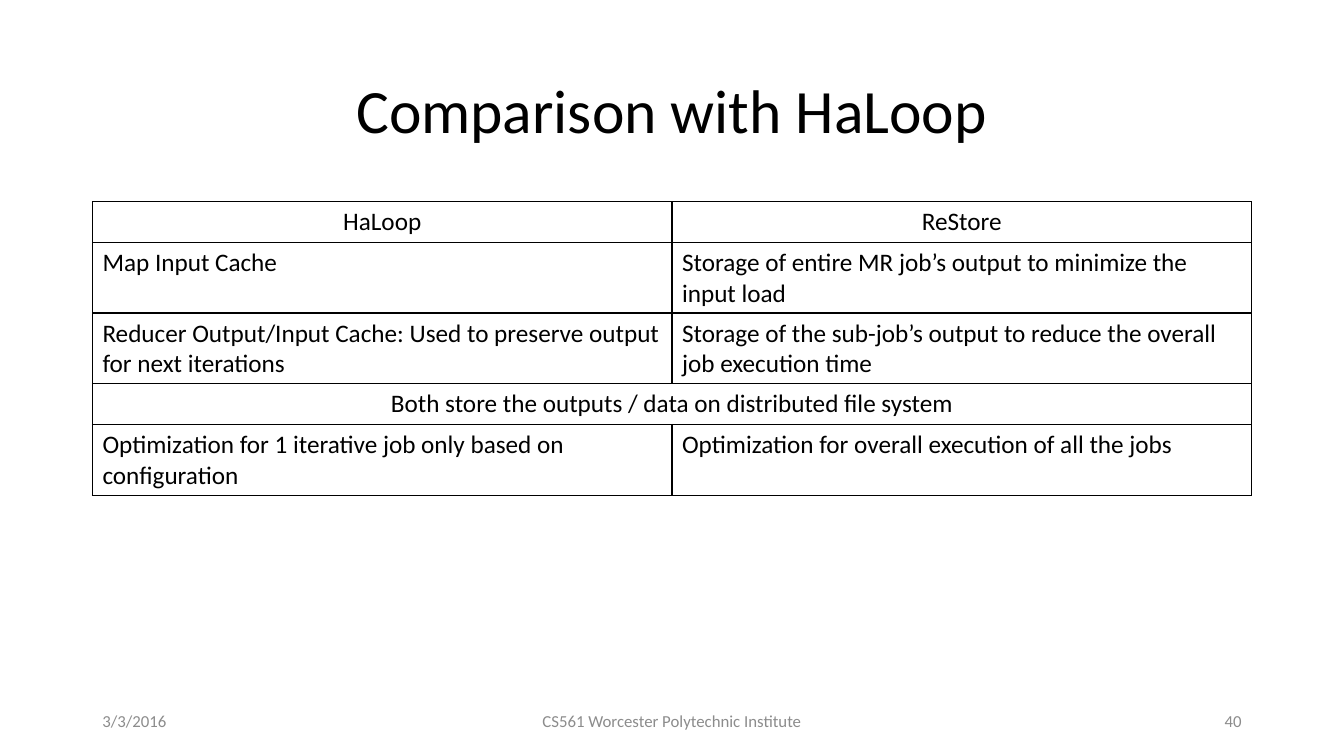
from dataclasses import dataclass

from lxml.etree import SubElement
from pptx import Presentation
from pptx.dml.color import RGBColor
from pptx.enum.text import MSO_ANCHOR, PP_ALIGN
from pptx.oxml.ns import qn
from pptx.slide import Slide
from pptx.table import _Cell
from pptx.text.text import _Paragraph
from pptx.util import Cm, Pt


@dataclass(frozen=True)
class Theme:
    font: str = "Calibri"
    ink: str = "000000"
    muted: str = "8C8C8C"
    title_size: int = 44
    table_size: int = 18
    footer_size: int = 12
    border_width: int = 1


@dataclass(frozen=True)
class TextLine:
    text: str
    left: float
    top: float
    width: float
    height: float
    size: int
    color: str
    alignment: PP_ALIGN
    line_spacing: float = 1.0


@dataclass(frozen=True)
class ComparisonRow:
    """A row with one text spans both columns."""
    texts: tuple[str, ...]
    alignment: PP_ALIGN = PP_ALIGN.LEFT


THEME = Theme()
MARGIN = 2.33
CONTENT_WIDTH = 29.21
TABLE_TOP = 5.08
ROW_HEIGHT = 1.03
FOOTER_TOP = 17.66
FOOTER_HEIGHT = 1.01
SIDE_WIDTH = 7.62
CENTER_WIDTH = 11.43


def footer_line(text: str, left: float, width: float, alignment: PP_ALIGN) -> TextLine:
    return TextLine(text, left, FOOTER_TOP, width, FOOTER_HEIGHT,
                    THEME.footer_size, THEME.muted, alignment)


TEXT_LINES = (
    TextLine("Comparison with HaLoop", MARGIN, 1.01, CONTENT_WIDTH, 3.69,
             THEME.title_size, THEME.ink, PP_ALIGN.CENTER, 0.9),
    footer_line("3/3/2016", MARGIN, SIDE_WIDTH, PP_ALIGN.LEFT),
    footer_line("CS561 Worcester Polytechnic Institute",
                MARGIN + (CONTENT_WIDTH - CENTER_WIDTH) / 2, CENTER_WIDTH, PP_ALIGN.CENTER),
    footer_line("40", MARGIN + CONTENT_WIDTH - SIDE_WIDTH, SIDE_WIDTH, PP_ALIGN.RIGHT),
)

COMPARISON = (
    ComparisonRow(("HaLoop", "ReStore"), PP_ALIGN.CENTER),
    ComparisonRow(("Map Input Cache",
                   "Storage of entire MR job’s output to minimize the input load")),
    ComparisonRow(("Reducer Output/Input Cache: Used to preserve output for next iterations",
                   "Storage of the sub-job’s output to reduce the overall job execution time")),
    ComparisonRow(("Both store the outputs / data on distributed file system",), PP_ALIGN.CENTER),
    ComparisonRow(("Optimization for 1 iterative job only based on configuration",
                   "Optimization for overall execution of all the jobs")),
)


def format_paragraph(paragraph: _Paragraph, size: int, color: str, alignment: PP_ALIGN) -> None:
    paragraph.alignment = alignment
    for run in paragraph.runs:
        run.font.name = THEME.font
        run.font.size = Pt(size)
        run.font.color.rgb = RGBColor.from_string(color)


def add_text_line(slide: Slide, line: TextLine) -> None:
    shape = slide.shapes.add_textbox(Cm(line.left), Cm(line.top), Cm(line.width), Cm(line.height))
    text_frame = shape.text_frame
    text_frame.word_wrap = True
    text_frame.vertical_anchor = MSO_ANCHOR.MIDDLE
    text_frame.text = line.text
    paragraph = text_frame.paragraphs[0]
    paragraph.line_spacing = line.line_spacing
    format_paragraph(paragraph, line.size, line.color, line.alignment)


def style_cell(cell: _Cell) -> None:
    """Give the cell a border on every side and no fill."""
    properties = cell._tc.get_or_add_tcPr()
    for side in ("a:lnL", "a:lnR", "a:lnT", "a:lnB"):
        border = SubElement(properties, qn(side), w=str(Pt(THEME.border_width)))
        fill = SubElement(border, qn("a:solidFill"))
        SubElement(fill, qn("a:srgbClr"), val=THEME.ink)
    cell.fill.background()


def add_comparison_table(slide: Slide, rows: tuple[ComparisonRow, ...]) -> None:
    column_count = max(len(row.texts) for row in rows)
    table = slide.shapes.add_table(
        len(rows), column_count, Cm(MARGIN), Cm(TABLE_TOP),
        Cm(CONTENT_WIDTH), Cm(ROW_HEIGHT * len(rows))).table
    table.first_row = False
    table.horz_banding = False
    for cell in table.iter_cells():
        style_cell(cell)
    for row_index, row in enumerate(rows):
        if len(row.texts) == 1:
            table.cell(row_index, 0).merge(table.cell(row_index, column_count - 1))
        for column_index, text in enumerate(row.texts):
            text_frame = table.cell(row_index, column_index).text_frame
            text_frame.text = text
            format_paragraph(text_frame.paragraphs[0], THEME.table_size, THEME.ink, row.alignment)


def main() -> None:
    presentation = Presentation()
    presentation.slide_width = Cm(33.87)
    presentation.slide_height = Cm(19.05)
    slide = presentation.slides.add_slide(presentation.slide_layouts[6])
    for line in TEXT_LINES:
        add_text_line(slide, line)
    add_comparison_table(slide, COMPARISON)
    presentation.save("out.pptx")


if __name__ == "__main__":
    main()
